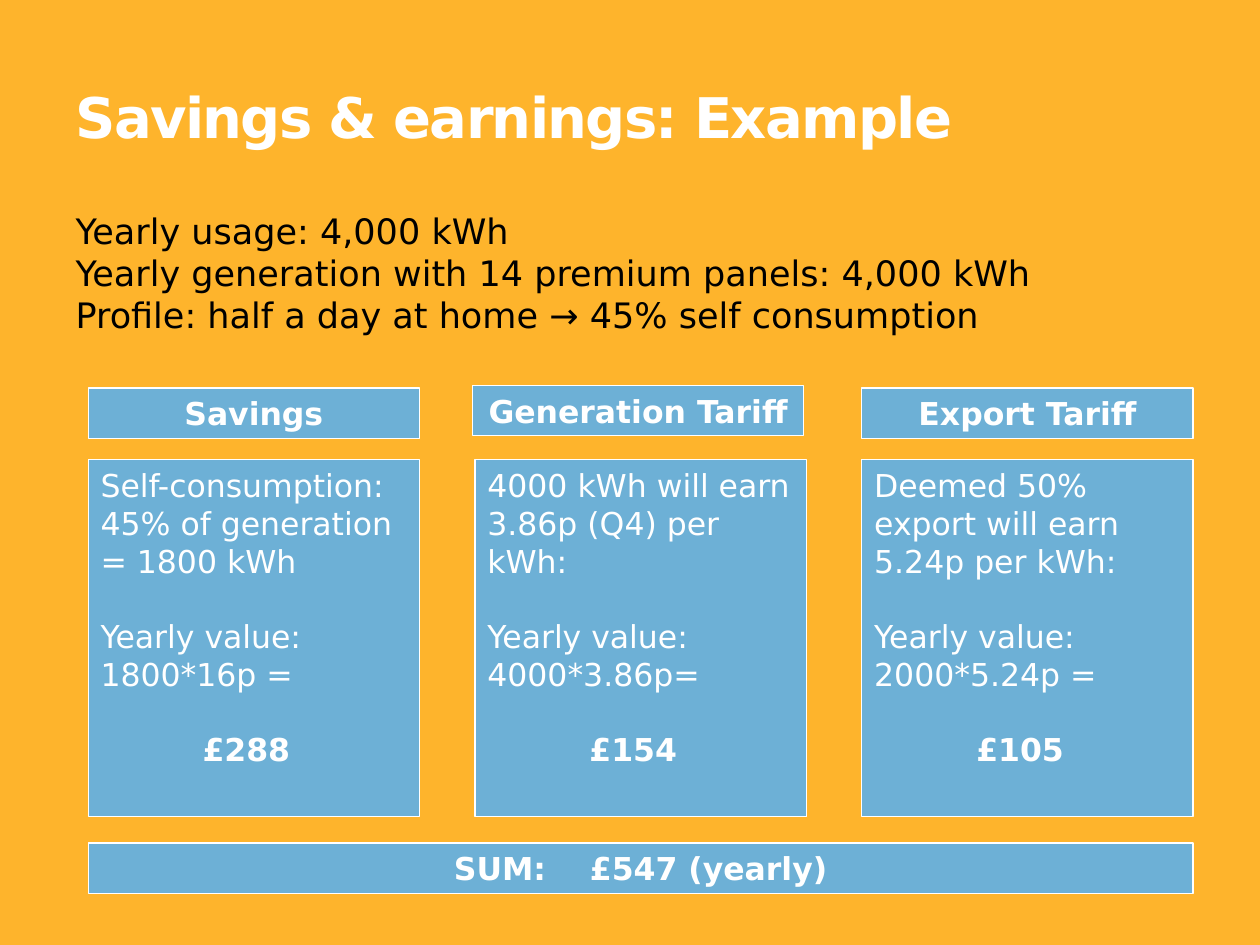
from pptx import Presentation
from pptx import util as u
from pptx.dml.color import RGBColor
from pptx.enum import shapes, text
from pptx.oxml.ns import qn

FONT = "DejaVu Sans"
ORANGE, BLUE, WHITE, BLACK = "FEB42C", "6DB0D6", "FFFFFF", "000000"

# Column grid, in inches
LEFT, COLUMN_WIDTH, PITCH = 0.7, 2.63, 3.07
HEADER_TOP, DETAIL_TOP, SUM_TOP = 3.08, 3.65, 6.69
BAR_HEIGHT, DETAIL_HEIGHT = 0.4, 2.83
LINE_GAP = 21.5  # one text line, in points

FACTS = [
    "Yearly usage: 4,000 kWh",
    "Yearly generation with 14 premium panels: 4,000 kWh",
    "Profile: half a day at home → 45% self consumption",
]

# Header, header nudge, explanation, calculation, amount
COLUMNS = [
    ("Savings", 0, "Self-consumption: 45% of generation = 1800 kWh",
     "1800*16p =", "£288"),
    ("Generation Tariff", -0.02, "4000 kWh will earn 3.86p (Q4) per kWh:",
     "4000*3.86p=", "£154"),
    ("Export Tariff", 0, "Deemed 50% export will earn 5.24p per kWh:",
     "2000*5.24p =", "£105"),
]


def color(value):
    return RGBColor.from_string(value)


def add_run(paragraph, words, size=18, fill=WHITE, bold=False, spacing=None):
    run = paragraph.add_run()
    run.text = words
    run.font.name = FONT
    run.font.size = u.Pt(size)
    run.font.bold = bold
    run.font.color.rgb = color(fill)
    if spacing is not None:  # letter spacing in points
        run._r.get_or_add_rPr().set("spc", str(round(spacing * 100)))


def next_paragraph(frame, align=text.PP_ALIGN.LEFT, before=0, indent=0):
    """Use the first paragraph while it is empty, then add new ones."""
    first = frame.paragraphs[0]
    paragraph = frame.add_paragraph() if first.runs else first
    properties = paragraph._p.get_or_add_pPr()
    properties.set("marL", str(u.Inches(indent)))
    properties.set("indent", "0")
    properties.append(properties.makeelement(qn("a:buNone"), {}))
    paragraph.alignment = align
    paragraph.space_before = u.Pt(before)
    return paragraph


def place(shape, left, top, width, height, anchor):
    shape.left, shape.top = u.Inches(left), u.Inches(top)
    shape.width, shape.height = u.Inches(width), u.Inches(height)
    frame = shape.text_frame
    frame.word_wrap = True
    frame.auto_size = text.MSO_AUTO_SIZE.NONE
    frame.vertical_anchor = anchor
    return frame


def add_box(slide, left, top, width, height):
    shape = slide.shapes.add_shape(shapes.MSO_SHAPE.RECTANGLE, 0, 0, 0, 0)
    shape.shadow.inherit = False
    shape.fill.solid()
    shape.fill.fore_color.rgb = color(BLUE)
    shape.line.color.rgb = color(WHITE)
    shape.line.width = u.Pt(0.75)
    return place(shape, left, top, width, height, text.MSO_ANCHOR.TOP)


def add_bar(slide, left, top, width):
    frame = add_box(slide, left, top, width, BAR_HEIGHT)
    return next_paragraph(frame, text.PP_ALIGN.CENTER)


def add_detail(slide, left, explanation, calculation, amount):
    frame = add_box(slide, left, DETAIL_TOP, COLUMN_WIDTH, DETAIL_HEIGHT)
    add_run(next_paragraph(frame), explanation)
    add_run(next_paragraph(frame, before=LINE_GAP), "Yearly value:")
    add_run(next_paragraph(frame), calculation)
    result = next_paragraph(frame, before=LINE_GAP, indent=0.81)
    add_run(result, amount, bold=True)


def main():
    presentation = Presentation()
    presentation.slide_width = u.Inches(10)
    presentation.slide_height = u.Inches(7.5)
    slide = presentation.slides.add_slide(presentation.slide_layouts[1])
    slide.background.fill.solid()
    slide.background.fill.fore_color.rgb = color(ORANGE)

    # Title and key facts
    title = place(slide.shapes.title, 0.5, 0.3, 9, 1.25,
                  text.MSO_ANCHOR.MIDDLE)
    add_run(next_paragraph(title), "Savings & earnings: Example",
            size=32, bold=True, spacing=-1)
    body = place(slide.placeholders[1], 0.5, 1.61, 9.25, 1.11,
                 text.MSO_ANCHOR.TOP)
    for fact in FACTS:
        add_run(next_paragraph(body), fact, size=20, fill=BLACK)

    # Three columns
    for index, (header, nudge, *detail) in enumerate(COLUMNS):
        left = LEFT + index * PITCH
        add_detail(slide, left, *detail)
        bar = add_bar(slide, left + nudge, HEADER_TOP + nudge, COLUMN_WIDTH)
        add_run(bar, header, bold=True)

    # Sum across all columns, with one wide space before the amount
    total = add_bar(slide, LEFT, SUM_TOP, 2 * PITCH + COLUMN_WIDTH)
    add_run(total, "SUM:", bold=True)
    add_run(total, " ", bold=True, spacing=18.8)
    add_run(total, "£547 (yearly)", bold=True)

    presentation.save("out.pptx")


if __name__ == "__main__":
    main()
